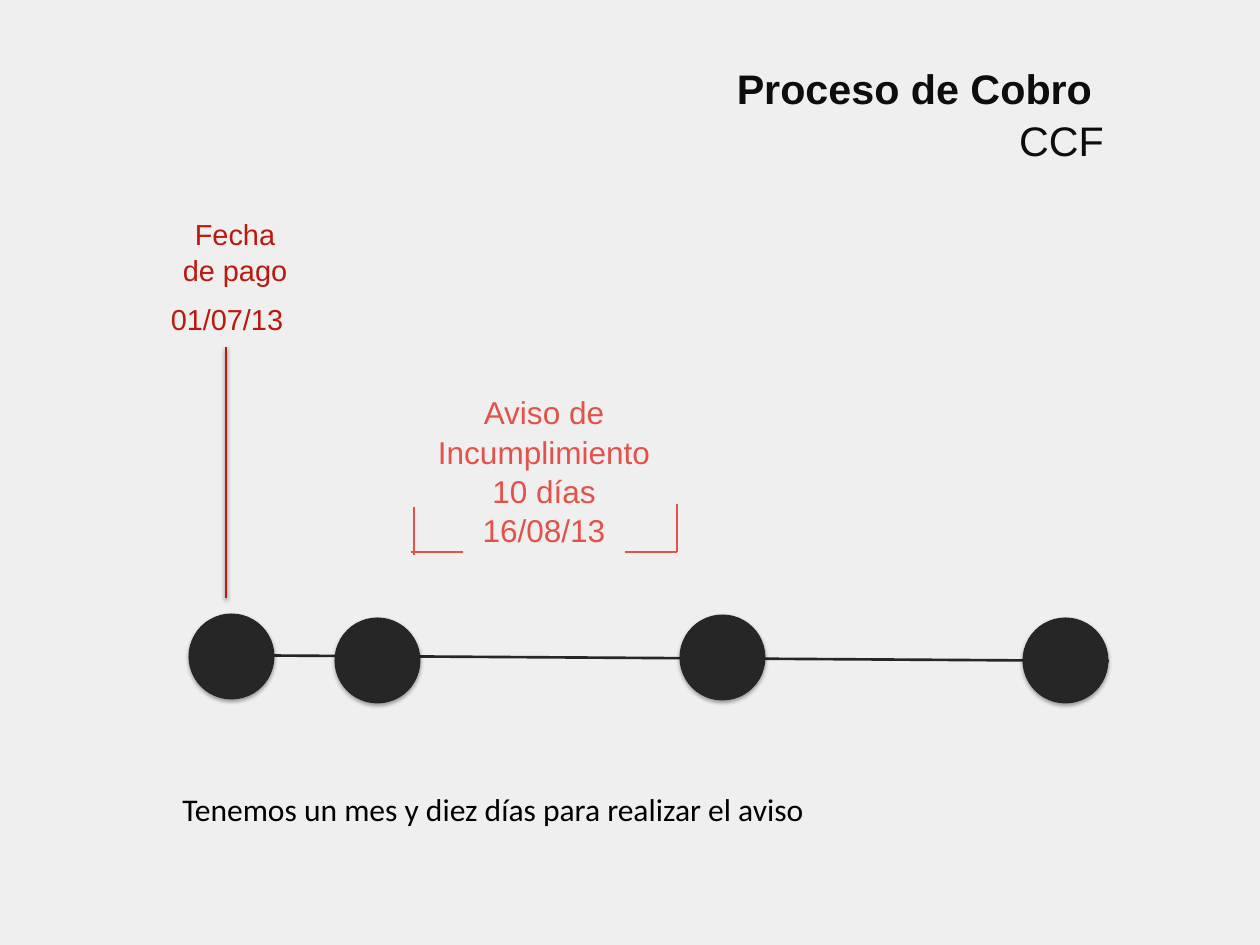
"""Build the payment collection timeline slide."""
from lxml.etree import SubElement
from pptx import Presentation
from pptx.dml.color import RGBColor
from pptx.enum.shapes import MSO_CONNECTOR as CONNECTOR, MSO_SHAPE as SHAPE
from pptx.enum.text import MSO_ANCHOR as ANCHOR, PP_ALIGN as ALIGN
from pptx.oxml.ns import qn
from pptx.util import Pt

PX = 9666
PALE = RGBColor(0xEF, 0xEF, 0xEF)
INK = RGBColor(0x0D, 0x0D, 0x0D)
BLACK = RGBColor(0, 0, 0)
CHARCOAL = RGBColor(0x26, 0x26, 0x26)
RED = RGBColor(0xBB, 0x19, 0x0E)
CORAL = RGBColor(0xE3, 0x52, 0x4A)


def set_shadow(shape, opacity=0, distance=0):
    """Give the shape a soft downward shadow, or none at zero opacity."""
    effects = SubElement(shape.element.spPr, qn("a:effectLst"))
    if opacity:
        shadow = SubElement(effects, qn("a:outerShdw"), blurRad=str(Pt(3.1)),
                            dist=str(Pt(distance)), dir="5400000", rotWithShape="0")
        color = SubElement(shadow, qn("a:srgbClr"), val="000000")
        SubElement(color, qn("a:alpha"), val=str(opacity * 1000))


def add_line(x1, y1, x2, y2, color, opacity=0):
    """Draw a straight two-point line."""
    line = page.shapes.add_connector(CONNECTOR.STRAIGHT, x1 * PX, y1 * PX, x2 * PX, y2 * PX)
    line.line.color.rgb = color
    line.line.width = Pt(2)
    set_shadow(line, opacity, 1.6)


deck = Presentation()
deck.slide_width, deck.slide_height = 1260 * PX, 945 * PX
page = deck.slides.add_slide(deck.slide_layouts[6])
page.background.fill.solid()
page.background.fill.fore_color.rgb = PALE

add_line(190, 655, 1109, 661, CHARCOAL)
for left, top in [(189, 614), (335, 618), (680, 615), (1023, 618)]:
    milestone = page.shapes.add_shape(SHAPE.OVAL, left * PX, top * PX, 85 * PX, 85 * PX)
    milestone.fill.solid()
    milestone.fill.fore_color.rgb = CHARCOAL
    milestone.line.color.rgb = CHARCOAL
    milestone.line.width = Pt(0.75)
    set_shadow(milestone, 35, 1.8)

add_line(226, 347, 226, 598, RED, 38)
for bracket in [(414, 507, 414, 555), (411, 552, 463, 552),
                (625, 552, 677, 552), (677, 504, 677, 552)]:
    add_line(*bracket, CORAL)

texts = [
    ((476, 65, 640, 96), ["Proceso de Cobro ", "CCF"], 31.4, "Arial", INK, ALIGN.RIGHT, 1.05),
    ((173, 210, 124, 79), ["Fecha de pago"], 22, "Arial", RED, ALIGN.CENTER, 1.05),
    ((157, 295, 140, 44), ["01/07/13"], 22, "Arial", RED, ALIGN.CENTER, 1.05),
    ((411, 387, 266, 201), ["Aviso de Incumplimiento", "10 días", "16/08/13"],
     24, "Arial", CORAL, ALIGN.CENTER, 1.04),
    ((173, 785, 690, 47), ["Tenemos un mes y diez días para realizar el aviso"],
     24, "Calibri", BLACK, ALIGN.LEFT, 1.0),
]
for bounds, lines, size, font, color, align, spacing in texts:
    box = page.shapes.add_textbox(*[length * PX for length in bounds])
    frame = box.text_frame
    frame.word_wrap = True
    if color == INK:
        frame.vertical_anchor = ANCHOR.MIDDLE
        frame.margin_left = frame.margin_right = 12 * PX
        frame.margin_top = frame.margin_bottom = 7 * PX
    for index, line in enumerate(lines):
        para = frame.add_paragraph() if index else frame.paragraphs[0]
        para.alignment = align
        para.line_spacing = spacing
        span = para.add_run()
        span.text = line
        span.font.name = font
        span.font.size = Pt(size)
        span.font.color.rgb = color
        span.font.bold = color == INK and index == 0

deck.save("out.pptx")
